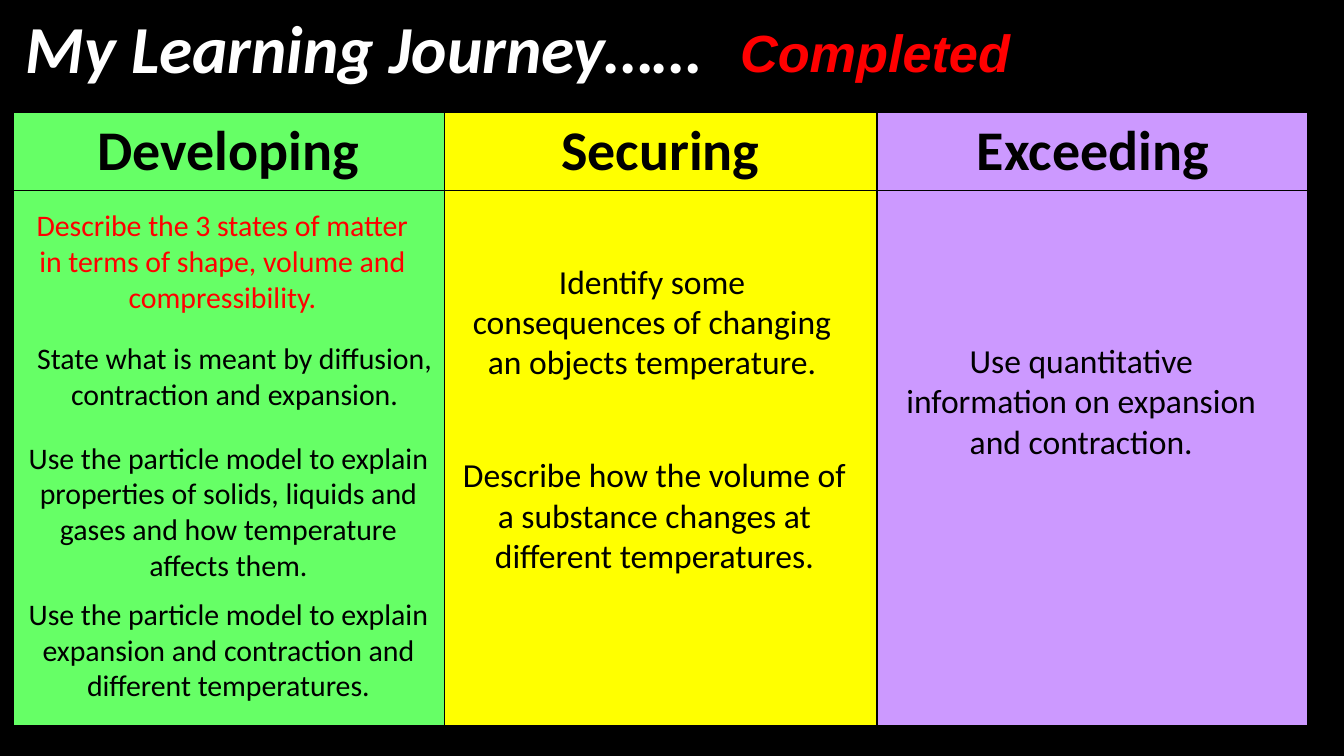
from lxml import etree
from pptx import Presentation
from pptx import util as u
from pptx.dml.color import RGBColor
from pptx.enum import text
from pptx.oxml.ns import qn

BLACK, WHITE, RED = "000000", "FFFFFF", "FF0000"


def style(frame, size, colour, font="Calibri", align=text.PP_ALIGN.CENTER,
          bold=False, italic=False):
    frame.word_wrap = True
    paragraph = frame.paragraphs[0]
    paragraph.alignment = align
    face = paragraph.runs[0].font
    face.name, face.size = font, u.Pt(size)
    face.bold, face.italic = bold, italic
    face.color.rgb = RGBColor.from_string(colour)


def add_borders(cell, widths):
    """Draw black cell borders; widths maps each side (L, R, T, B) to points."""
    properties = cell._tc.get_or_add_tcPr()
    for side, width in widths.items():
        line = etree.SubElement(properties, qn(f"a:ln{side}"), w=str(u.Pt(width)))
        fill = etree.SubElement(line, qn("a:solidFill"))
        etree.SubElement(fill, qn("a:srgbClr"), val=BLACK)


deck = Presentation()
deck.slide_width, deck.slide_height = u.Cm(25.4), u.Cm(14.29)
slide = deck.slides.add_slide(deck.slide_layouts[5])
slide.background.fill.solid()
slide.background.fill.fore_color.rgb = RGBColor.from_string(BLACK)

# Heading
title = slide.shapes.title
title.left, title.top, title.width, title.height = u.Cm(0.23), u.Cm(0), u.Cm(18.24), u.Cm(3.58)
title.text_frame.text = "My Learning Journey……"
title.text_frame.auto_size = text.MSO_AUTO_SIZE.NONE
title.text_frame.vertical_anchor = text.MSO_ANCHOR.TOP
style(title.text_frame, 36, WHITE, align=text.PP_ALIGN.LEFT, bold=True, italic=True)

# Levels: one column each, a heading row above a body row
levels = [("Developing", "66FF66"), ("Securing", "FFFF00"), ("Exceeding", "CC99FF")]
journey = slide.shapes.add_table(2, 3, u.Cm(0.23), u.Cm(2.11), u.Cm(24.51), u.Cm(11.63)).table
journey.rows[0].height, journey.rows[1].height = u.Cm(1.49), u.Cm(10.14)
for column, (level, colour) in enumerate(levels):
    journey.columns[column].width = u.Cm(8.17)
    for row in range(2):
        cell = journey.cell(row, column)
        add_borders(cell, {"L": 2.25 if column == 0 else 1,
                           "R": 2.25 if column == 2 else 1,
                           "T": 2.25 if row == 0 else 1,
                           "B": 2.25 if row == 1 else 1})
        cell.fill.solid()
        cell.fill.fore_color.rgb = RGBColor.from_string(colour)
    heading = journey.cell(0, column)
    heading.text_frame.text = level
    heading.vertical_anchor = text.MSO_ANCHOR.MIDDLE
    heading.margin_left = heading.margin_right = u.Cm(0.18)
    heading.margin_top = heading.margin_bottom = u.Cm(0.1)
    style(heading.text_frame, 30, BLACK, bold=True)

# Goals: left, top, width, height in cm, then size, colour and wording
goals = [
    (0.23, 3.78, 7.95, 2.31, 16, RED,
     "Describe the 3 states of matter in terms of shape, volume and compressibility."),
    (0.41, 6.3, 8.05, 1.63, 16, BLACK,
     "State what is meant by diffusion, contraction and expansion."),
    (0.23, 8.18, 8.18, 3, 16, BLACK,
     "Use the particle model to explain properties of solids, liquids and gases "
     "and how temperature affects them."),
    (0.23, 11.13, 8.18, 2.31, 16, BLACK,
     "Use the particle model to explain expansion and contraction and different temperatures."),
    (8.53, 4.8, 7.59, 2.57, 18, BLACK,
     "Identify some consequences of changing an objects temperature."),
    (8.28, 8.46, 8.18, 2.57, 18, BLACK,
     "Describe how the volume of a substance changes at different temperatures."),
    (16.64, 6.3, 7.59, 2.57, 18, BLACK,
     "Use quantitative information on expansion and contraction."),
]
for left, top, width, height, size, colour, wording in goals:
    goal = slide.shapes.add_textbox(u.Cm(left), u.Cm(top), u.Cm(width), u.Cm(height))
    goal.text_frame.text = wording
    style(goal.text_frame, size, colour)

# Key to the red goal
completed = slide.shapes.add_textbox(u.Cm(13.74), u.Cm(0.25), u.Cm(6.93), u.Cm(1.45))
completed.text_frame.text = "Completed"
style(completed.text_frame, 28, RED, font="Arial", align=text.PP_ALIGN.LEFT,
      bold=True, italic=True)

deck.save("out.pptx")
